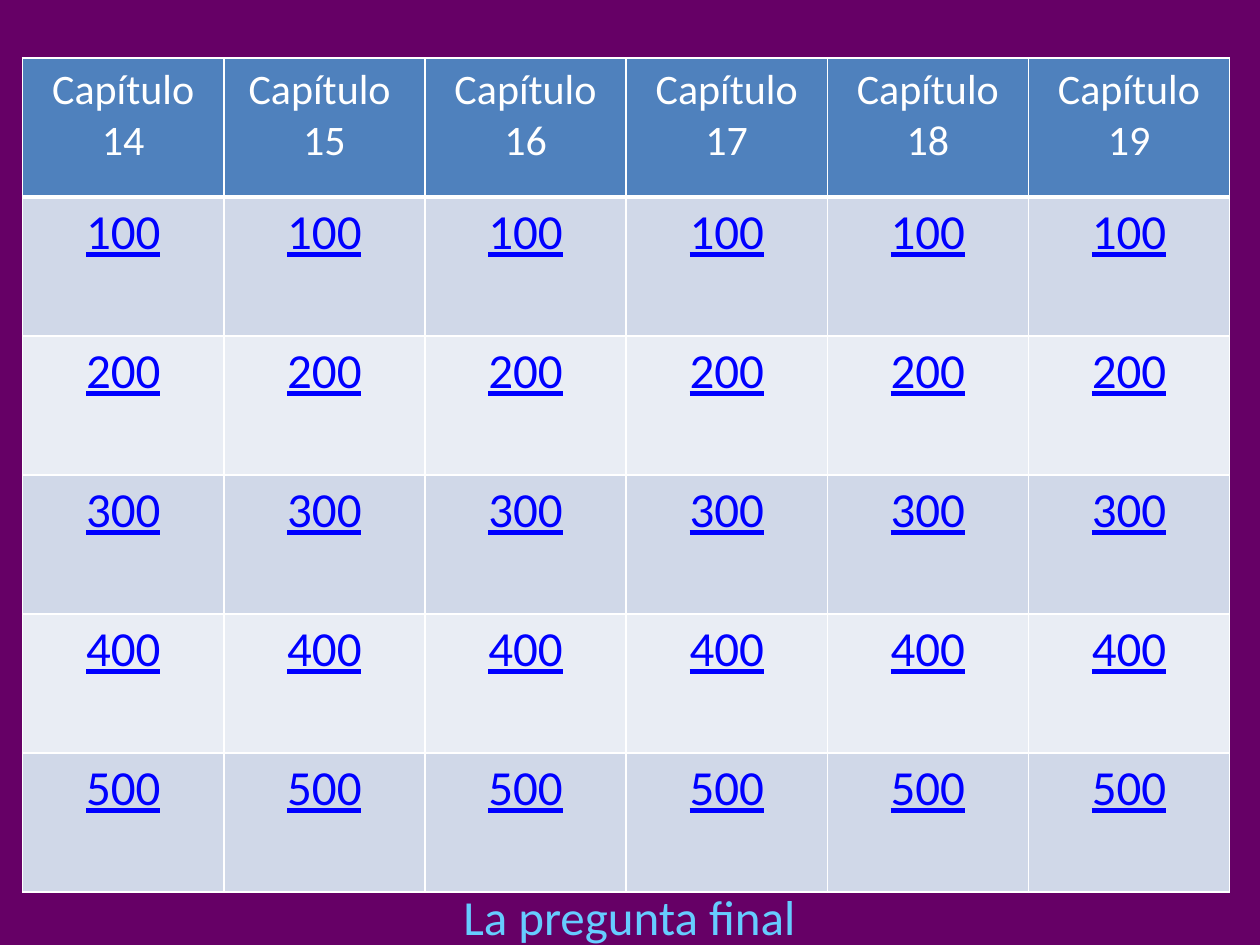
from dataclasses import dataclass

from lxml.etree import SubElement
from pptx import Presentation
from pptx.dml.color import RGBColor
from pptx.enum.text import MSO_AUTO_SIZE, PP_ALIGN
from pptx.oxml.ns import qn
from pptx.slide import Slide
from pptx.table import _Cell as Cell
from pptx.text.text import TextFrame
from pptx.util import Inches, Pt

COLORS = {
    "background": "660066",
    "header": "4F81BD",
    "odd_row": "D0D8E8",
    "even_row": "E9EDF4",
    "white": "FFFFFF",
    "link": "0000FF",
    "final": "66CCFF",
}
CHAPTERS = ["Capítulo 14", "Capítulo \n15", *(f"Capítulo {number}" for number in range(16, 20))]
POINTS = range(100, 501, 100)


@dataclass(frozen=True)
class TextStyle:
    """Look of a centred text."""

    size: int
    color: str
    underline: bool = False


@dataclass(frozen=True)
class BoardRow:
    """One row of the question board."""

    labels: list[str]
    fill: str
    style: TextStyle
    bottom_border: int = 1


def rgb(name: str) -> RGBColor:
    """Return the named colour."""
    return RGBColor.from_string(COLORS[name])


def write_text(frame: TextFrame, text: str, style: TextStyle) -> None:
    """Write centred text in one style."""
    frame.text = text
    for paragraph in frame.paragraphs:
        paragraph.alignment = PP_ALIGN.CENTER
        font = paragraph.font
        font.name, font.size, font.bold = "Calibri", Pt(style.size), False
        font.color.rgb = rgb(style.color)
        font.underline = style.underline
        for run in paragraph.runs:
            run.font.bold = False
            run.font.name, run.font.size = font.name, font.size
            run.font.color.rgb = rgb(style.color)
            run.font.underline = style.underline


def set_borders(cell: Cell, bottom: int) -> None:
    """Outline a cell in white."""
    properties = cell._tc.get_or_add_tcPr()
    for tag, width in {"a:lnL": 1, "a:lnR": 1, "a:lnT": 1, "a:lnB": bottom}.items():
        line = SubElement(properties, qn(tag), w=str(Pt(width)))
        fill = SubElement(line, qn("a:solidFill"))
        SubElement(fill, qn("a:srgbClr"), val=COLORS["white"])


def add_board(slide: Slide, rows: list[BoardRow]) -> None:
    """Add the table of chapters and point values."""
    table = slide.shapes.add_table(
        len(rows), len(CHAPTERS), Inches(0.18), Inches(0.46), Inches(9.58), Inches(6.62)
    ).table
    for row_index, row in enumerate(rows):
        for column_index, label in enumerate(row.labels):
            cell = table.cell(row_index, column_index)
            set_borders(cell, row.bottom_border)
            cell.fill.solid()
            cell.fill.fore_color.rgb = rgb(row.fill)
            write_text(cell.text_frame, label, row.style)


def add_final_question(slide: Slide) -> None:
    """Add the caption under the board."""
    frame = slide.shapes.add_textbox(
        Inches(2.96), Inches(6.99), Inches(4.07), Inches(0.57)
    ).text_frame
    frame.word_wrap = True
    frame.auto_size = MSO_AUTO_SIZE.SHAPE_TO_FIT_TEXT
    write_text(frame, "La pregunta final", TextStyle(28, "final"))


def main() -> None:
    """Build and save the slide."""
    presentation = Presentation()
    presentation.slide_width, presentation.slide_height = Inches(10), Inches(7.5)
    slide = presentation.slides.add_slide(presentation.slide_layouts[6])
    slide.background.fill.solid()
    slide.background.fill.fore_color.rgb = rgb("background")

    link_style = TextStyle(28, "link", underline=True)
    rows = [BoardRow(CHAPTERS, "header", TextStyle(24, "white"), bottom_border=3)]
    for index, points in enumerate(POINTS):
        fill = "even_row" if index % 2 else "odd_row"
        rows.append(BoardRow([str(points)] * len(CHAPTERS), fill, link_style))
    add_board(slide, rows)
    add_final_question(slide)
    presentation.save("out.pptx")


if __name__ == "__main__":
    main()
